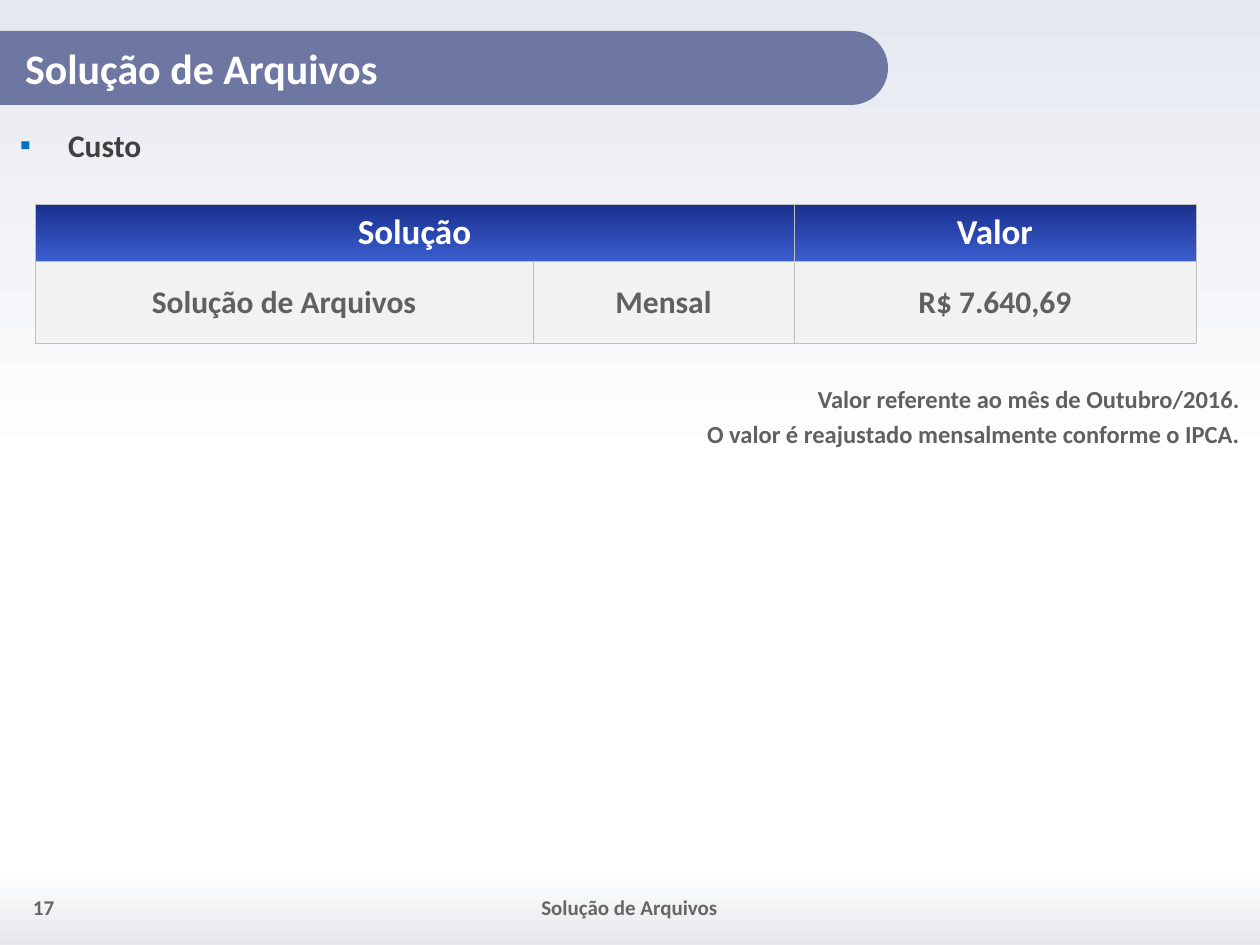
from lxml.etree import SubElement
from pptx import Presentation
from pptx.dml.color import RGBColor
from pptx.enum.shapes import MSO_SHAPE
from pptx.enum.text import MSO_ANCHOR, MSO_AUTO_SIZE, PP_ALIGN
from pptx.oxml import parse_xml
from pptx.oxml.ns import nsdecls, qn
from pptx.util import Emu, Pt

TITLE = "Solução de Arquivos"
TOPIC = "Custo"
NOTES = [
    "Valor referente ao mês de Outubro/2016.",
    "O valor é reajustado mensalmente conforme o IPCA.",
]
HEADER = ["Solução", "", "Valor"]
COSTS = ["Solução de Arquivos", "Mensal", "R$ 7.640,69"]
COLUMN_WIDTHS = [498, 261, 402]
ROW_HEIGHTS = [57, 82]
FOOTERS = [
    (TITLE, (246, 882, 767, 50), PP_ALIGN.CENTER),
    ("17", (20, 882, 88, 50), PP_ALIGN.LEFT),
]


class Theme:
    font = "Calibri"
    white, banner, bullet = "FFFFFF", "6E77A2", "0070C0"
    topic, muted, footer = "404040", "606060", "666666"
    cell, border = "F2F2F2", "BFBFBF"
    page_gradient = [(0, "E5E8EF"), (0.5, "FFFFFF")]
    footer_gradient = [(0, "E7E8ED"), (1, "FFFFFF")]
    header_gradient = [(0, "1A308E"), (1, "3A5DCE")]
    title_size, header_size, text_size, note_size, footer_size = 24, 20, 18, 14, 12


DOWN, UP = 270, 90
PAGE_WIDTH, PAGE_HEIGHT = 1260, 945


def px(length):
    return Emu(round(length * 914400 / 126))


def place(shape, left, top, width, height):
    shape.left, shape.top = px(left), px(top)
    shape.width, shape.height = px(width), px(height)


def set_gradient(fill, stops, angle):
    fill.gradient()
    fill.gradient_angle = angle
    for stop, (position, color) in zip(fill.gradient_stops, stops):
        stop.position = position
        stop.color.rgb = RGBColor.from_string(color)


def set_solid(fill, color):
    fill.solid()
    fill.fore_color.rgb = RGBColor.from_string(color)


def write(para, text, size, color, align=PP_ALIGN.LEFT):
    para.alignment = align
    span = para.add_run()
    span.text = text
    span.font.name, span.font.size, span.font.bold = Theme.font, Pt(size), True
    span.font.color.rgb = RGBColor.from_string(color)


def set_frame(frame, anchor, insets):
    frame.word_wrap = True
    frame.auto_size = MSO_AUTO_SIZE.NONE
    frame.vertical_anchor = anchor
    (frame.margin_left, frame.margin_top,
     frame.margin_right, frame.margin_bottom) = map(px, insets)


def set_bullet(para, indent, mark=None):
    properties = para._p.get_or_add_pPr()
    properties.set("marL", str(px(indent)))
    properties.set("indent", str(px(-indent)))
    if mark:
        color = SubElement(properties, qn("a:buClr"))
        SubElement(color, qn("a:srgbClr"), val=Theme.bullet)
        SubElement(properties, qn("a:buChar"), char=mark)
    else:
        SubElement(properties, qn("a:buNone"))


def add_backdrop(page):
    set_gradient(page.background.fill, Theme.page_gradient, DOWN)
    strip = page.shapes.add_shape(MSO_SHAPE.RECTANGLE, 0, 0, 0, 0)
    place(strip, 0, 869, PAGE_WIDTH, 76)
    set_gradient(strip.fill, Theme.footer_gradient, UP)
    banner = page.shapes.add_shape(MSO_SHAPE.ROUND_2_SAME_RECTANGLE, 0, 0, 0, 0)
    place(banner, 407, -376, 74, 888)
    banner.rotation = 90
    banner.adjustments[0], banner.adjustments[1] = 0.5, 0
    set_solid(banner.fill, Theme.banner)
    for shape in (strip, banner):
        shape.line.fill.background()
        shape.shadow.inherit = False


def fill_placeholders(page):
    title, body = page.placeholders[0], page.placeholders[1]
    for holder in (title, body):  # in front of the backdrop
        holder.element.getparent().append(holder.element)
    place(title, 0, 0, PAGE_WIDTH, 106)
    set_frame(title.text_frame, MSO_ANCHOR.BOTTOM, (25, 0, 25, 13))
    write(title.text_frame.paragraphs[0], TITLE, Theme.title_size, Theme.white)

    place(body, 0, 116, PAGE_WIDTH, 751)
    frame = body.text_frame
    set_frame(frame, MSO_ANCHOR.TOP, (20, 10, 20, 25))
    topic = frame.paragraphs[0]
    topic.space_before = Pt(0)
    set_bullet(topic, 48, "▪")
    write(topic, TOPIC, Theme.text_size, Theme.topic)
    for index, note in enumerate(NOTES):
        para = frame.add_paragraph()
        para.space_before = Pt(2.8 if index else 126)  # first note clears the table
        set_bullet(para, 0)
        write(para, note, Theme.note_size, Theme.muted, PP_ALIGN.RIGHT)


def add_borders(cell):
    properties = cell._tc.get_or_add_tcPr()
    for index, side in enumerate(("lnL", "lnR", "lnT", "lnB")):
        properties.insert(index, parse_xml(
            f'<a:{side} {nsdecls("a")} w="{Pt(0.5)}"><a:solidFill>'
            f'<a:srgbClr val="{Theme.border}"/></a:solidFill></a:{side}>'))


def add_cost_table(page):
    table = page.shapes.add_table(
        2, 3, px(35), px(204), px(sum(COLUMN_WIDTHS)), px(sum(ROW_HEIGHTS))).table
    table.first_row = table.horz_banding = False
    for column, width in zip(table.columns, COLUMN_WIDTHS):
        column.width = px(width)
    for row, height in zip(table.rows, ROW_HEIGHTS):
        row.height = px(height)
    table.cell(0, 0).merge(table.cell(0, 1))
    for row, texts in enumerate((HEADER, COSTS)):
        for column, text in enumerate(texts):
            cell = table.cell(row, column)
            cell.vertical_anchor = MSO_ANCHOR.MIDDLE
            cell.margin_left = cell.margin_top = cell.margin_right = px(1)
            cell.margin_bottom = 0
            if row == 0:
                set_gradient(cell.fill, Theme.header_gradient, DOWN)
                size, color = Theme.header_size, Theme.white
            else:
                set_solid(cell.fill, Theme.cell)
                size, color = Theme.text_size, Theme.muted
            add_borders(cell)
            if text:
                write(cell.text_frame.paragraphs[0], text, size, color, PP_ALIGN.CENTER)


def add_footers(page):
    for text, area, align in FOOTERS:
        box = page.shapes.add_textbox(*map(px, area))
        set_frame(box.text_frame, MSO_ANCHOR.MIDDLE, (13, 6, 13, 6))
        write(box.text_frame.paragraphs[0], text, Theme.footer_size, Theme.footer, align)


def main():
    deck = Presentation()
    deck.slide_width, deck.slide_height = px(PAGE_WIDTH), px(PAGE_HEIGHT)
    page = deck.slides.add_slide(deck.slide_layouts[1])
    add_backdrop(page)
    fill_placeholders(page)
    add_footers(page)
    add_cost_table(page)
    deck.save("out.pptx")


if __name__ == "__main__":
    main()
